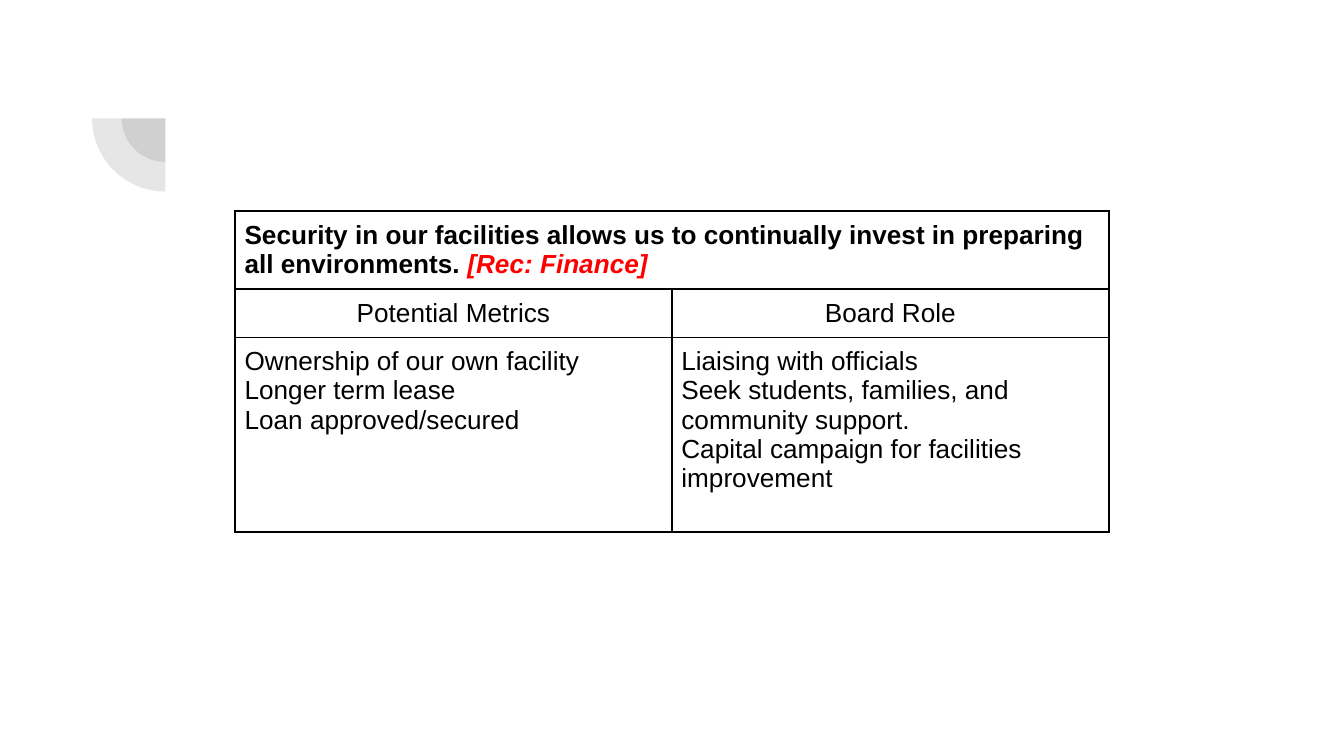
from dataclasses import dataclass

from lxml.etree import SubElement
from pptx import Presentation
from pptx.dml.color import RGBColor
from pptx.enum.shapes import MSO_SHAPE
from pptx.enum.text import PP_ALIGN
from pptx.oxml.ns import qn
from pptx.util import Inches, Pt

BLACK, RED, GREY = "000000", "FF0000", "424242"
BASE_FONT = {"name": "Arial", "size": Pt(14), "bold": False, "italic": False}
COL_WIDTH = 3.25
ROW_HEIGHTS = (0.58, 0.36, 1.45)
CELL_INSET = 0.07
ARC_CENTER = (1.23, 0.88)
ARC_DIAMETERS = (0.65, 1.09)


@dataclass(frozen=True)
class Run:
    text: str
    color: str = BLACK
    bold: bool = False
    italic: bool = False


@dataclass(frozen=True)
class Cell:
    row: int
    col: int
    paragraphs: tuple[tuple[Run, ...], ...]
    align: PP_ALIGN = PP_ALIGN.LEFT


def lines(*texts: str) -> tuple[tuple[Run, ...], ...]:
    """Make one plain paragraph of each text."""
    return tuple((Run(text),) for text in texts)


CELLS = (
    Cell(0, 0, ((
        Run("Security in our facilities allows us to continually invest in "
            "preparing all environments. ", bold=True),
        Run("[Rec: Finance]", RED, bold=True, italic=True),
    ),)),
    Cell(1, 0, lines("Potential Metrics"), PP_ALIGN.CENTER),
    Cell(1, 1, lines("Board Role"), PP_ALIGN.CENTER),
    Cell(2, 0, lines("Ownership of our own facility", "Longer term lease",
                     "Loan approved/secured")),
    Cell(2, 1, lines("Liaising with officials",
                     "Seek students, families, and community support.",
                     "Capital campaign for facilities improvement")),
)


def rgb(color: str) -> RGBColor:
    return RGBColor.from_string(color)


def add_quarter_disc(slide, diameter: float) -> None:
    """Draw a translucent lower-left quarter of a disc around ARC_CENTER."""
    left, top = (Inches(c - diameter / 2) for c in ARC_CENTER)
    sp = slide.shapes.add_shape(MSO_SHAPE.PIE, left, top,
                                Inches(diameter), Inches(diameter))
    sp.adjustments[0], sp.adjustments[1] = 108, 162
    sp.rotation = 270
    sp.shadow.inherit = False
    sp.line.fill.background()
    sp.fill.solid()
    sp.fill.fore_color.rgb = rgb(GREY)
    clr = sp.fill._xPr.find(qn("a:solidFill"))[0]
    SubElement(clr, qn("a:alpha"), val="13000")


def set_borders(cell, color: str = BLACK, width: float = 1) -> None:
    tc_pr = cell._tc.get_or_add_tcPr()
    for i, side in enumerate(("lnL", "lnR", "lnT", "lnB")):
        ln = tc_pr.makeelement(qn(f"a:{side}"), {"w": str(Pt(width))})
        fill = SubElement(ln, qn("a:solidFill"))
        SubElement(fill, qn("a:srgbClr"), val=color)
        tc_pr.insert(i, ln)


def write_cell(cell, content: Cell) -> None:
    tf = cell.text_frame
    for i, runs in enumerate(content.paragraphs):
        p = tf.paragraphs[0] if i == 0 else tf.add_paragraph()
        p.alignment = content.align
        for run in runs:
            r = p.add_run()
            r.text = run.text
            font = BASE_FONT | {"bold": run.bold, "italic": run.italic}
            for name, value in font.items():
                setattr(r.font, name, value)
            r.font.color.rgb = rgb(run.color)


def add_goal_table(slide) -> None:
    table = slide.shapes.add_table(
        len(ROW_HEIGHTS), 2, Inches(1.75), Inches(1.57),
        Inches(2 * COL_WIDTH), Inches(sum(ROW_HEIGHTS))).table
    table.first_row = table.horz_banding = False
    for column in table.columns:
        column.width = Inches(COL_WIDTH)
    for row, height in zip(table.rows, ROW_HEIGHTS):
        row.height = Inches(height)
    table.cell(0, 0).merge(table.cell(0, 1))
    for cell in table.iter_cells():
        for side in ("left", "right", "top", "bottom"):
            setattr(cell, f"margin_{side}", Inches(CELL_INSET))
        cell.fill.background()
        set_borders(cell)
    for content in CELLS:
        write_cell(table.cell(content.row, content.col), content)


def main() -> None:
    prs = Presentation()
    prs.slide_width = Inches(10)
    prs.slide_height = prs.slide_width * 9 // 16
    slide = prs.slides.add_slide(prs.slide_layouts[6])
    for diameter in ARC_DIAMETERS:
        add_quarter_disc(slide, diameter)
    add_goal_table(slide)
    prs.save("out.pptx")


if __name__ == "__main__":
    main()
